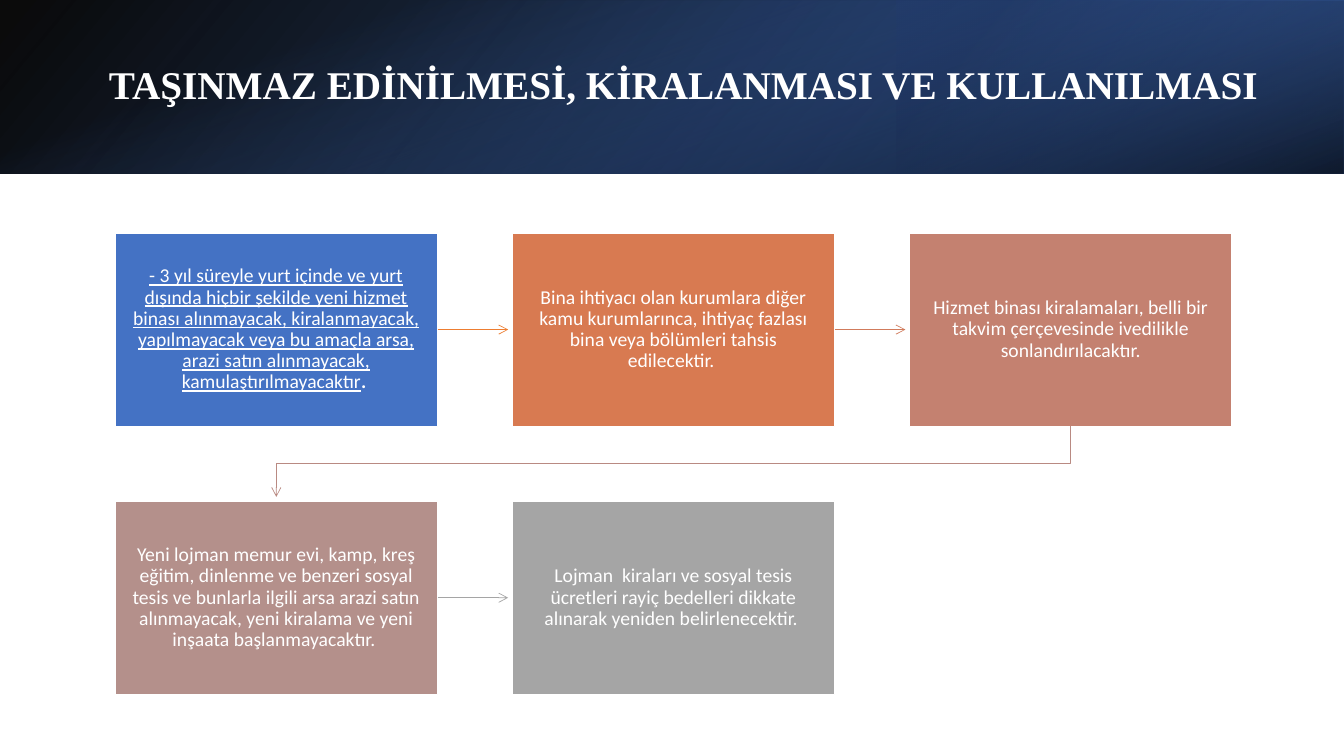
import pptx
import pptx.dml.color
import pptx.enum.shapes
import pptx.enum.text
import pptx.oxml.ns
import pptx.util
from lxml import etree

RGB = pptx.dml.color.RGBColor
WHITE = RGB(0xFF, 0xFF, 0xFF)
BLACK = RGB(0x00, 0x00, 0x00)
BLUE = RGB(0x44, 0x72, 0xC4)
MID_BLUE = RGB(0x2F, 0x55, 0x97)
NAVY = RGB(0x20, 0x38, 0x64)
ORANGE = RGB(0xED, 0x7D, 0x31)
COPPER = RGB(0xD8, 0x7A, 0x51)
RUST = RGB(0xD1, 0x7B, 0x5C)
ROSE = RGB(0xC4, 0x81, 0x70)
DUSK = RGB(0xB9, 0x8A, 0x82)
MAUVE = RGB(0xB4, 0x90, 0x8B)
GREY = RGB(0xA5, 0xA5, 0xA5)

TITLE = "TAŞINMAZ EDİNİLMESİ, KİRALANMASI VE KULLANILMASI"
STEPS = [
    (BLUE, ORANGE, [
        ("- 3 yıl süreyle yurt içinde ve yurt dışında hiçbir şekilde yeni hizmet binası "
         "alınmayacak, kiralanmayacak, yapılmayacak veya bu amaçla arsa, arazi satın "
         "alınmayacak, kamulaştırılmayacaktır", {"underline": True}),
        (". ", {"bold": True})]),
    (COPPER, RUST, [
        ("Bina ihtiyacı olan kurumlara diğer kamu kurumlarınca, ihtiyaç fazlası bina veya "
         "bölümleri tahsis edilecektir. ", {})]),
    (ROSE, DUSK, [
        ("Hizmet binası kiralamaları, belli bir takvim çerçevesinde ivedilikle "
         "sonlandırılacaktır.", {})]),
    (MAUVE, GREY, [
        ("Yeni lojman memur evi, kamp, kreş eğitim, dinlenme ve benzeri sosyal tesis ve "
         "bunlarla ilgili arsa arazi satın alınmayacak, yeni kiralama ve yeni inşaata "
         "başlanmayacaktır. ", {})]),
    (GREY, None, [
        ("Lojman  kiraları ve sosyal tesis ücretleri rayiç bedelleri dikkate alınarak "
         "yeniden belirlenecektir. ", {})]),
]
BANNERS = [
    {"at": (0, 0, 1333, 172), "turn": 0, "flip": True, "angle": 140,
     "stops": [(0, BLACK, 96), (100, MID_BLUE, 100)]},
    {"at": (889, 0, 444, 172), "turn": 180, "flip": True, "angle": 320,
     "stops": [(19, NAVY, 68), (100, BLUE, 79)]},
    {"at": (580, -580, 172, 1333), "turn": 90, "flip": False, "angle": 340,
     "stops": [(23, BLUE, 0), (99, BLACK, 74)]},
]
PX = 9144
COLUMNS, LEFT, TOP, WIDTH, HEIGHT = 3, 114, 231, 320, 192
PITCH_X, PITCH_Y, ARROW, INSET = 394, 266, 70, 16


def px(*lengths):
    return [pptx.util.Emu(length * PX) for length in lengths]


def assign(target, values):
    for name, value in values.items():
        setattr(target, name, value)


def add_child(parent, tag, **attributes):
    return etree.SubElement(parent, pptx.oxml.ns.qn(tag), **attributes)


def add_rect(page, at):
    box = page.shapes.add_shape(pptx.enum.shapes.MSO_SHAPE.RECTANGLE, *px(*at))
    box.shadow.inherit = False
    return box


def add_banner(page, banner):
    box = add_rect(page, banner["at"])
    box.line.fill.background()
    box.rotation = banner["turn"]
    if banner["flip"]:
        box.element.spPr.get_or_add_xfrm().set("flipH", "1")
    box.fill.gradient()
    box.fill.gradient_angle = 360 - banner["angle"]
    for stop, (place, color, opacity) in zip(box.fill.gradient_stops, banner["stops"]):
        stop.position = place / 100
        stop.color.rgb = color
    tags = box.element.spPr.iter(pptx.oxml.ns.qn("a:srgbClr"))
    for tag, (place, color, opacity) in zip(tags, banner["stops"]):
        add_child(tag, "a:alpha", val=str(opacity * 1000))


def write(frame, spans, font, layout):
    assign(frame, {"word_wrap": True, **layout,
                   "vertical_anchor": pptx.enum.text.MSO_ANCHOR.MIDDLE})
    para = frame.paragraphs[0]
    para.line_spacing = 0.9
    for text, extra in spans:
        span = para.add_run()
        span.text = text
        assign(span.font, {**font, **extra})
        span.font.color.rgb = WHITE
    return para


def add_step(page, x, y, fill, spans):
    box = add_rect(page, (x, y, WIDTH, HEIGHT))
    box.fill.solid()
    box.fill.fore_color.rgb = fill
    box.line.color.rgb = WHITE
    box.line.width = pptx.util.Pt(1)
    margins = {f"margin_{side}": px(INSET)[0] for side in ("left", "top", "right", "bottom")}
    para = write(box.text_frame, spans, {"name": "Calibri", "size": pptx.util.Pt(14)}, margins)
    para.alignment = pptx.enum.text.PP_ALIGN.CENTER


def add_arrow(page, points, color):
    if len(points) == 2:
        arrow = page.shapes.add_connector(
            pptx.enum.shapes.MSO_CONNECTOR.STRAIGHT, *px(*points[0], *points[1]))
    else:
        builder = page.shapes.build_freeform(*points[0], scale=PX)
        builder.add_line_segments(points[1:], close=False)
        arrow = builder.convert_to_shape()
        arrow.fill.background()
    arrow.line.color.rgb = color
    arrow.line.width = pptx.util.Pt(0.5)
    add_child(arrow.line._get_or_add_ln(), "a:tailEnd", type="arrow")
    add_child(arrow.element.spPr, "a:effectLst")


def main():
    """Build the slide with its banner, title and five linked steps."""
    deck = pptx.Presentation()
    assign(deck, dict(zip(("slide_width", "slide_height"), px(1333, 750))))
    page = deck.slides.add_slide(deck.slide_layouts[5])
    for banner in BANNERS:
        add_banner(page, banner)

    title = page.shapes.title
    assign(title, dict(zip(("left", "top", "width", "height"), px(98, 38, 1178, 96))))
    font = {"name": "Times New Roman", "size": pptx.util.Pt(28), "bold": True}
    para = write(title.text_frame, [(TITLE, {})], font, {})
    para.alignment = pptx.enum.text.PP_ALIGN.LEFT
    title.element.getparent().append(title.element)

    for index, (fill, arrow_color, spans) in enumerate(STEPS):
        row, column = divmod(index, COLUMNS)
        x, y = LEFT + column * PITCH_X, TOP + row * PITCH_Y
        add_step(page, x, y, fill, spans)
        if arrow_color is None:
            continue
        if column < COLUMNS - 1:
            start, middle = x + WIDTH, y + HEIGHT // 2
            points = [(start, middle), (start + ARROW, middle)]
        else:
            start, end, bottom = x + WIDTH // 2, LEFT + WIDTH // 2, y + HEIGHT
            bend = bottom + (PITCH_Y - HEIGHT) // 2
            points = [(start, bottom), (start, bend), (end, bend), (end, bottom + ARROW)]
        add_arrow(page, points, arrow_color)
    deck.save("out.pptx")


if __name__ == "__main__":
    main()
